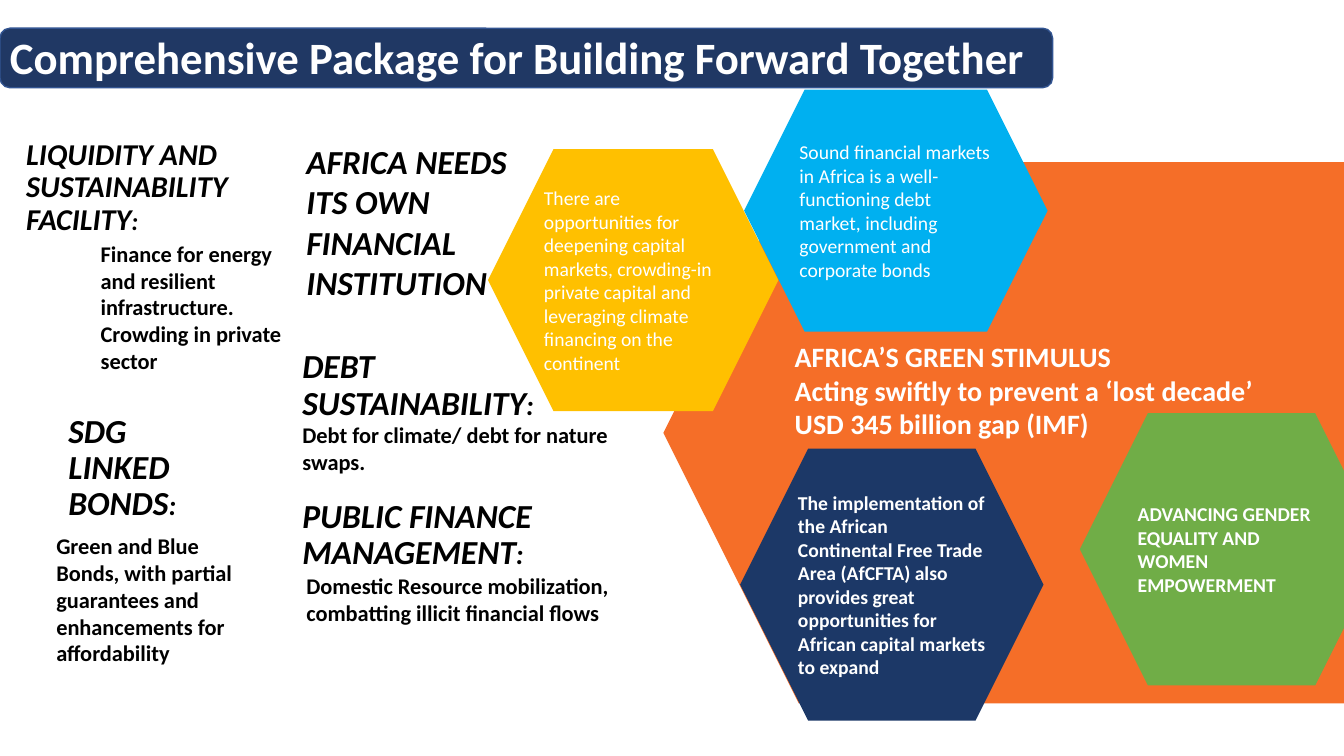
import pptx
import pptx.util
import pptx.dml.color
import pptx.enum.shapes
import pptx.enum.text

Inches = pptx.util.Inches
Pt = pptx.util.Pt
SHAPE = pptx.enum.shapes.MSO_SHAPE
ANCHOR = pptx.enum.text.MSO_ANCHOR
COLORS = {"navy": "203864", "navy_line": "325491", "orange": "F56E28",
          "deep_blue": "1C3867", "yellow": "FFC000", "sky": "00B0F0",
          "green": "70AD47", "white": "FFFFFF", "black": "000000"}


def rgb(name):
    return pptx.dml.color.RGBColor.from_string(COLORS[name])


def write(shape, paragraphs, color, anchor, spacing=1.0, insets=None, **font):
    """Fill a shape with paragraphs, each a list of (text, size) runs."""
    tf = shape.text_frame
    tf.word_wrap = True
    tf.vertical_anchor = anchor
    for side, inset in (insets or {}).items():
        setattr(tf, f"margin_{side}", Inches(inset))
    for i, runs in enumerate(paragraphs):
        p = tf.add_paragraph() if i else tf.paragraphs[0]
        p.alignment = pptx.enum.text.PP_ALIGN.LEFT
        p.line_spacing = spacing
        for text, size in runs:
            r = p.add_run()
            r.text = text
            for key, value in {"name": "Calibri", "size": Pt(size), **font}.items():
                setattr(r.font, key, value)
            r.font.color.rgb = rgb(color)


prs = pptx.Presentation()
prs.slide_width, prs.slide_height = Inches(13.33), Inches(7.5)
s = prs.slides.add_slide(prs.slide_layouts[6])

# Title bar
bar = s.shapes.add_shape(SHAPE.ROUNDED_RECTANGLE, 0, Inches(0.28), Inches(10.44), Inches(0.59))
bar.shadow.inherit = False
bar.fill.solid()
bar.fill.fore_color.rgb = rgb("navy")
bar.line.color.rgb = rgb("navy_line")
bar.line.width = Pt(1)
write(bar, [[("Comprehensive Package for Building Forward Together", 32)]], "white",
      ANCHOR.MIDDLE, insets={"left": 0.07, "right": 0.07, "top": 0.05, "bottom": 0.08}, bold=True)

# Hexagons: position, fill, bold, size, bottom inset, paragraphs
hexagons = [
    ((6.58, 1.61, 9.08, 5.37), "orange", True, 20, 0.95,
     ["AFRICA’S GREEN STIMULUS", "Acting swiftly to prevent a ‘lost decade’",
      "USD 345 billion gap (IMF)"]),
    ((7.34, 4.45, 3.01, 2.7), "deep_blue", True, 14, 0.1,
     ["The implementation of the African Continental Free Trade Area (AfCFTA) also "
      "provides great opportunities for African capital markets to expand"]),
    ((4.84, 1.48, 2.88, 2.6), "yellow", False, 14, 0.1,
     ["There are opportunities for deepening capital markets, crowding-in private capital "
      "and leveraging climate financing on the continent"]),
    ((7.38, 0.89, 3.01, 2.4), "sky", False, 14, 0.1,
     ["Sound financial markets in Africa is a well-functioning debt market, including "
      "government and corporate bonds"]),
    ((10.71, 4.1, 3.01, 2.7), "green", True, 14, 0.1,
     ["ADVANCING GENDER EQUALITY AND WOMEN EMPOWERMENT"]),
]
for box, fill, bold, size, bottom, lines in hexagons:
    sp = s.shapes.add_shape(SHAPE.HEXAGON, *map(Inches, box))
    sp.shadow.inherit = False
    sp.fill.solid()
    sp.fill.fore_color.rgb = rgb(fill)
    sp.line.fill.background()
    write(sp, [[(line, size)] for line in lines], "white", ANCHOR.MIDDLE,
          insets={"left": 0.1, "right": 0.1, "top": 0.1, "bottom": bottom}, bold=bold)

# Italic headings: the closing colon is smaller
headings = [
    ((0.16, 1.48, 2.95, 0.77), "LIQUIDITY AND SUSTAINABILITY FACILITY", 21.6, 18),
    ((0.58, 4.22, 1.57, 0.86), "SDG LINKED BONDS", 24, 20),
    ((2.9, 3.46, 3.17, 0.74), "DEBT SUSTAINABILITY", 24, 20),
    ((2.9, 4.94, 3.35, 0.74), "PUBLIC FINANCE MANAGEMENT", 24, 20),
]
for box, text, size, colon_size in headings:
    write(s.shapes.add_textbox(*map(Inches, box)), [[(text, size), (":", colon_size)]],
          "black", ANCHOR.MIDDLE, spacing=0.9, bold=True, italic=True)

# Details under the headings, and the standalone statement
details = [
    ((0.9, 2.33, 2.1, 1.45), 16, False,
     "Finance for energy and resilient infrastructure. Crowding in private sector"),
    ((0.46, 5.23, 2.01, 1.45), 16, False,
     "Green and Blue Bonds, with partial guarantees and enhancements for affordability"),
    ((2.9, 4.13, 3.52, 0.64), 16, False, "Debt for climate/ debt for nature swaps."),
    ((2.94, 5.63, 3.49, 0.64), 16, False,
     "Domestic Resource mobilization, combatting illicit financial flows"),
    ((2.94, 1.35, 2.27, 1.72), 24, True, "AFRICA NEEDS ITS OWN FINANCIAL INSTITUTION"),
]
for box, size, italic, text in details:
    write(s.shapes.add_textbox(*map(Inches, box)), [[(text, size)]],
          "black", ANCHOR.TOP, bold=True, italic=italic)

prs.save("out.pptx")
